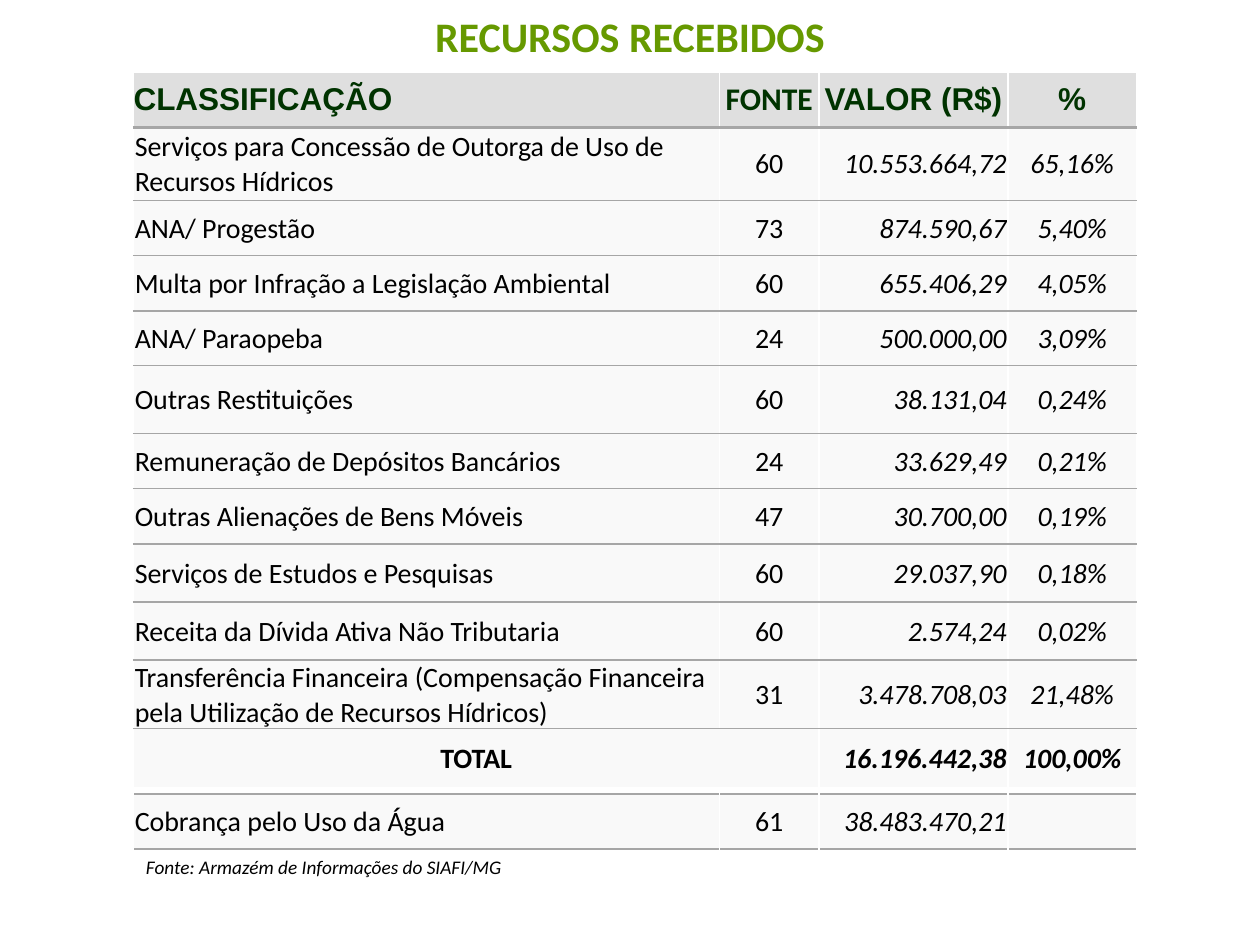
from lxml.etree import SubElement
from pptx import Presentation
from pptx.dml.color import RGBColor
from pptx.enum.text import MSO_ANCHOR as Anchor, PP_ALIGN as Align
from pptx.oxml.ns import qn
from pptx.util import Pt

PX = 9144  # 100 px to the inch
WHITE, GRAY, BLACK = "FFFFFF", "A6A6A6", "000000"
COLUMNS = [465, 79, 150, 102]
ALIGNS = [Align.LEFT, Align.CENTER, Align.RIGHT, Align.CENTER]

HEADER = ("CLASSIFICAÇÃO", "FONTE", "VALOR (R$)", "%")
REVENUES = [
    (58, "Serviços para Concessão de Outorga de Uso de Recursos Hídricos",
     "60", "10.553.664,72", "65,16%"),
    (44, "ANA/ Progestão", "73", "874.590,67", "5,40%"),
    (44, "Multa por Infração a Legislação Ambiental", "60", "655.406,29", "4,05%"),
    (43, "ANA/ Paraopeba", "24", "500.000,00", "3,09%"),
    (54, "Outras Restituições", "60", "38.131,04", "0,24%"),
    (44, "Remuneração de Depósitos Bancários", "24", "33.629,49", "0,21%"),
    (44, "Outras Alienações de Bens Móveis", "47", "30.700,00", "0,19%"),
    (46, "Serviços de Estudos e Pesquisas", "60", "29.037,90", "0,18%"),
    (46, "Receita da Dívida Ativa Não Tributaria", "60", "2.574,24", "0,02%"),
    (54, "Transferência Financeira (Compensação Financeira pela Utilização "
         "de Recursos Hídricos)", "31", "3.478.708,03", "21,48%"),
]
TOTAL = ("TOTAL", "", "16.196.442,38", "100,00%")
WATER_CHARGE = ("Cobrança pelo Uso da Água", "61", "38.483.470,21", "")


def px(*lengths):
    return [length * PX for length in lengths]


def color(hex_code):
    return RGBColor.from_string(hex_code)


def write(para, text, align, hex_code, **font):
    para.alignment = align
    if not text:
        return
    span = para.add_run()
    span.text = text
    span.font.color.rgb = color(hex_code)
    for name, value in font.items():
        setattr(span.font, name, value)


def add_text(page, box, text, align, hex_code, **font):
    frame = page.shapes.add_textbox(*px(*box)).text_frame
    frame.word_wrap = True
    frame.vertical_anchor = Anchor.MIDDLE
    write(frame.paragraphs[0], text, align, hex_code, **font)


def set_borders(cell, top, bottom):
    """Draw white sides; top and bottom are (colour, points) pairs."""
    side = (WHITE, 1)
    properties = cell._tc.get_or_add_tcPr()
    edges = {"a:lnL": side, "a:lnR": side, "a:lnT": top, "a:lnB": bottom}
    for index, (tag, (hex_code, points)) in enumerate(edges.items()):
        line = SubElement(properties, qn(tag), w=str(Pt(points)))
        fill = SubElement(line, qn("a:solidFill"))
        SubElement(fill, qn("a:srgbClr"), val=hex_code)
        properties.insert(index, line)


def format_cell(cell, fill, top, bottom, margin):
    cell.fill.solid()
    cell.fill.fore_color.rgb = color(fill)
    cell.vertical_anchor = Anchor.MIDDLE
    cell.margin_left = cell.margin_right = cell.margin_top = margin * PX
    cell.margin_bottom = 0
    set_borders(cell, top, bottom)


def add_grid(page, box, heights):
    table = page.shapes.add_table(len(heights), len(COLUMNS), *px(*box)).table
    table.first_row = table.horz_banding = False
    for column, width in zip(table.columns, px(*COLUMNS)):
        column.width = width
    for row, height in zip(table.rows, px(*heights)):
        row.height = height
    return table


def fill_header(row):
    fonts = ["Arial", "Calibri", "Arial", "Arial"]
    for index, (cell, text, font) in enumerate(zip(row.cells, HEADER, fonts)):
        format_cell(cell, "DFDFDF", (WHITE, 1), (GRAY, 2.25), 0)
        write(cell.text_frame.paragraphs[0], text,
              Align.CENTER if index else Align.LEFT, "003300",
              name=font, size=Pt(18), bold=True)


def fill_row(row, texts, top=(GRAY, 1), bottom=(GRAY, 1), bold=False, aligns=ALIGNS):
    for index, (cell, text, align) in enumerate(zip(row.cells, texts, aligns)):
        format_cell(cell, "F9F9F9", top, bottom, 1)
        write(cell.text_frame.paragraphs[0], text, align, BLACK,
              name="Calibri", size=Pt(16), bold=bold, italic=index > 1)


def add_revenue_table(page, box):
    table = add_grid(page, box, [44, *(height for height, *_ in REVENUES), 47])
    header, *body, total = table.rows
    fill_header(header)
    for index, (row, (_, *texts)) in enumerate(zip(body, REVENUES)):
        fill_row(row, texts, top=(GRAY, 1 if index else 2.25))
    fill_row(total, TOTAL, bottom=(WHITE, 1), bold=True,
             aligns=[Align.CENTER, *ALIGNS[1:]])
    last = len(table.rows) - 1
    table.cell(last, 0).merge(table.cell(last, 1))


def add_charge_table(page, box):
    table = add_grid(page, box, [44])
    fill_row(table.rows[0], WATER_CHARGE)


def main():
    deck = Presentation()
    deck.slide_width, deck.slide_height = px(1000, 750)
    page = deck.slides.add_slide(deck.slide_layouts[6])
    add_text(page, (50, -11, 900, 79), "RECURSOS RECEBIDOS", Align.CENTER,
             "669900", name="Calibri", size=Pt(24), bold=True)
    add_revenue_table(page, (106, 57, 795, 570))
    add_text(page, (106, 678, 795, 20), "Fonte: Armazém de Informações do SIAFI/MG",
             Align.LEFT, BLACK, name="Calibri", size=Pt(11), italic=True)
    add_charge_table(page, (106, 630, 795, 44))
    deck.save("out.pptx")


if __name__ == "__main__":
    main()
